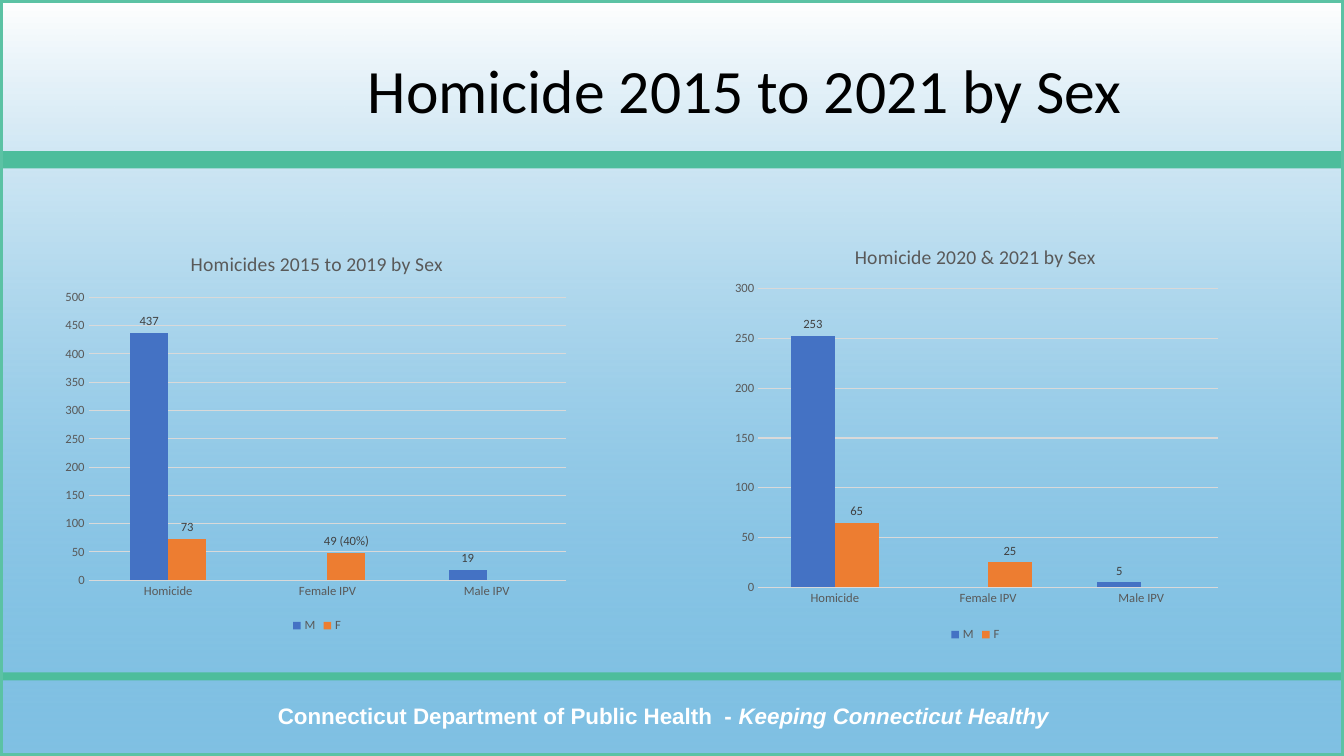
from lxml.etree import SubElement
from pptx import Presentation
from pptx.chart.data import CategoryChartData as ChartData
from pptx.dml.color import RGBColor as Color
from pptx.enum.chart import XL_CHART_TYPE as ChartType
from pptx.enum.chart import XL_LABEL_POSITION as LabelPosition
from pptx.enum.chart import XL_LEGEND_POSITION as LegendPosition
from pptx.enum.chart import XL_TICK_MARK as TickMark
from pptx.enum.shapes import MSO_SHAPE as Shape
from pptx.enum.text import MSO_ANCHOR as Anchor
from pptx.enum.text import MSO_AUTO_SIZE as AutoSize
from pptx.enum.text import PP_ALIGN as Align
from pptx.oxml.ns import qn
from pptx.util import Inches, Pt

COLORS = {
    "sky": "0082C8", "white": "FFFFFF", "green": "4DBD9C", "border": "5BC2A4",
    "black": "000000", "axis": "595959", "label": "404040", "grid": "D9D9D9",
    "M": "4472C4", "F": "ED7D31",
}
WIDTH, HEIGHT = 13.33, 7.5
CATEGORIES = ["Homicide", "Female IPV", "Male IPV"]
CHARTS = [
    {"title": "Homicide 2020 & 2021 by Sex", "place": (7.17, 2.24, 5.01, 4.17),
     "plot": (0.07, 0.15, 0.91, 0.71), "top": 300, "gap": 150, "baseline": False,
     "values": {"M": (253, None, 5), "F": (65, 25, None)}, "notes": {}},
    {"title": "Homicides 2015 to 2019 by Sex", "place": (0.57, 2.31, 5.15, 4.01),
     "plot": (0.06, 0.16, 0.92, 0.7), "top": 500, "gap": 219, "baseline": True,
     "values": {"M": (437, None, 19), "F": (73, 49, None)},
     "notes": {("F", 1): "49 (40%)"}},
]


def assign(target, values):
    """Set every attribute named in values on the target."""
    for name, value in values.items():
        setattr(target, name, value)


class SlideBuilder:
    """Holds the style and the current slide and draws each kind of element."""

    def __init__(self, deck, font="Calibri"):
        self.page = deck.slides.add_slide(deck.slide_layouts[5])
        self.font = font

    def color(self, name):
        return Color.from_string(COLORS[name])

    def style(self, font, size, color, **extra):
        assign(font, {"name": self.font, "size": Pt(size), "bold": False, **extra})
        font.color.rgb = self.color(color)

    def rectangle(self, top, height, fill=None, line=None):
        box = self.page.shapes.add_shape(
            Shape.RECTANGLE, 0, Inches(top), Inches(WIDTH), Inches(height))
        box.shadow.inherit = False
        box.fill.background()
        box.line.fill.background()
        if fill:
            box.fill.solid()
            box.fill.fore_color.rgb = self.color(fill)
        if line:
            box.line.color.rgb = self.color(line)
            box.line.width = Pt(4.5)
        return box

    def gradient(self, lower, upper):
        box = self.rectangle(0, HEIGHT)
        box.fill.gradient()
        box.fill.gradient_angle = 90
        for stop, name in zip(box.fill.gradient_stops, (lower, upper)):
            stop.color.rgb = self.color(name)
        tint = box.element.find(".//" + qn("a:gradFill")).find(".//" + qn("a:srgbClr"))
        SubElement(tint, qn("a:alpha")).set("val", "50000")

    def footer(self, place, spans):
        box = self.page.shapes.add_textbox(*map(Inches, place))
        box.text_frame.word_wrap = True
        para = box.text_frame.paragraphs[0]
        para.alignment = Align.CENTER
        for text, italic in spans:
            span = para.add_run()
            span.text = text
            self.style(span.font, 16, "white", name="Arial", bold=True, italic=italic)

    def title(self, text, place):
        box = self.page.shapes.title
        box.element.getparent().append(box.element)
        assign(box, dict(zip(("left", "top", "width", "height"), map(Inches, place))))
        assign(box.text_frame, {"text": text, "word_wrap": True,
                                "auto_size": AutoSize.NONE,
                                "vertical_anchor": Anchor.MIDDLE})
        para = box.text_frame.paragraphs[0]
        assign(para, {"alignment": Align.CENTER, "line_spacing": 0.9})
        self.style(para.runs[0].font, 44, "black")

    def place_plot(self, chart, plot):
        area = chart.element.find(".//" + qn("c:plotArea"))
        for old in area.findall(qn("c:layout")):
            area.remove(old)
        layout = SubElement(area, qn("c:layout"))
        area.insert(0, layout)
        manual = SubElement(layout, qn("c:manualLayout"))
        settings = [("layoutTarget", "inner"), ("xMode", "edge"), ("yMode", "edge")]
        for tag, value in settings + list(zip("xywh", plot)):
            SubElement(manual, qn("c:" + tag)).set("val", str(value))

    def axes(self, chart, top, baseline):
        for axis in (chart.category_axis, chart.value_axis):
            assign(axis, {"major_tick_mark": TickMark.NONE,
                          "minor_tick_mark": TickMark.NONE})
            self.style(axis.tick_labels.font, 9, "axis")
            axis.format.line.fill.background()
        if baseline:
            line = chart.category_axis.format.line
            line.color.rgb = self.color("grid")
            line.width = Pt(0.75)
        assign(chart.value_axis, {"minimum_scale": 0, "maximum_scale": top,
                                  "major_unit": 50, "has_major_gridlines": True})
        grid = chart.value_axis.major_gridlines.format.line
        grid.color.rgb = self.color("grid")
        grid.width = Pt(0.75)

    def series(self, series, notes):
        series.format.fill.solid()
        series.format.fill.fore_color.rgb = self.color(series.name)
        labels = series.data_labels
        assign(labels, {"show_value": True, "position": LabelPosition.OUTSIDE_END})
        self.style(labels.font, 9, "label")
        for (name, index), text in notes.items():
            if name == series.name:
                label = series.points[index].data_label
                label.text_frame.text = text
                span = label.text_frame.paragraphs[0].runs[0]
                self.style(span.font, 9, "label")
                label.position = LabelPosition.OUTSIDE_END

    def column_chart(self, title, place, plot, top, gap, baseline, values, notes):
        data = ChartData()
        data.categories = CATEGORIES
        for name, numbers in values.items():
            data.add_series(name, numbers)
        chart = self.page.shapes.add_chart(
            ChartType.COLUMN_CLUSTERED, *map(Inches, place), data).chart
        self.style(chart.font, 10, "black")
        assign(chart, {"has_title": True, "has_legend": True})
        chart.chart_title.text_frame.text = title
        heading = chart.chart_title.text_frame.paragraphs[0].runs[0]
        self.style(heading.font, 14, "axis")
        assign(chart.legend, {"position": LegendPosition.BOTTOM,
                              "include_in_layout": False})
        self.style(chart.legend.font, 9, "axis")
        assign(chart.plots[0], {"gap_width": gap, "overlap": 0,
                                "vary_by_categories": False})
        self.axes(chart, top, baseline)
        for series in chart.plots[0].series:
            self.series(series, notes)
        self.place_plot(chart, plot)


def main():
    deck = Presentation()
    assign(deck, {"slide_width": Inches(WIDTH), "slide_height": Inches(HEIGHT)})
    builder = SlideBuilder(deck)
    builder.gradient("sky", "white")
    builder.rectangle(6.67, 0.08, fill="green")
    builder.footer((0.69, 6.92, 11.78, 0.37), [
        ("Connecticut Department of Public Health  - ", False),
        ("Keeping Connecticut Healthy", True)])
    builder.rectangle(1.5, 0.17, fill="green")
    builder.rectangle(0, HEIGHT, line="border")
    builder.title("Homicide 2015 to 2021 by Sex", (2.11, 0.3, 10.56, 1.25))
    for chart in CHARTS:
        builder.column_chart(**chart)
    deck.save("out.pptx")


if __name__ == "__main__":
    main()
